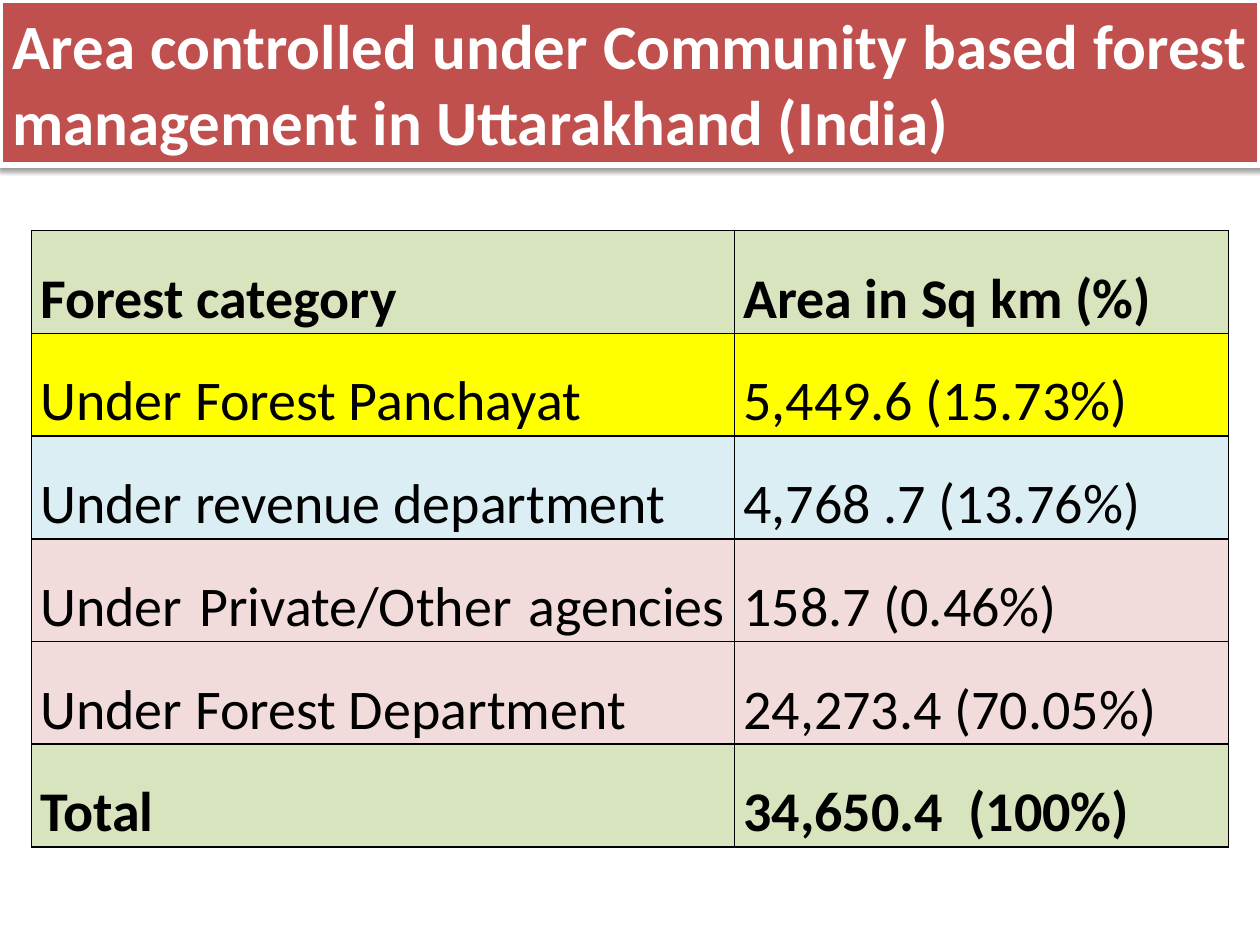
from dataclasses import dataclass

from lxml import etree
from pptx import Presentation
from pptx import util as u
from pptx.dml.color import RGBColor
from pptx.enum import text
from pptx.oxml import ns


@dataclass(frozen=True)
class Theme:
    font: str = "Calibri"
    title_size: int = 36
    table_size: int = 32
    banner: str = "C0504D"
    light: str = "FFFFFF"
    dark: str = "000000"
    green: str = "D7E4BD"
    yellow: str = "FFFF00"
    blue: str = "DBEEF4"
    pink: str = "F2DCDB"


@dataclass(frozen=True)
class ForestRow:
    category: str
    area: str
    fill: str
    bold: bool = False


THEME = Theme()
ROWS = [
    ForestRow("Forest category", "Area in Sq km (%)", THEME.green, True),
    ForestRow("Under Forest Panchayat", "5,449.6 (15.73%)", THEME.yellow),
    ForestRow("Under revenue department", "4,768 .7 (13.76%)", THEME.blue),
    # The trailing space makes the nearly full line stretch to the cell width.
    ForestRow("Under Private/Other agencies ", "158.7 (0.46%)", THEME.pink),
    ForestRow("Under Forest Department", "24,273.4 (70.05%)", THEME.pink),
    ForestRow("Total", "34,650.4  (100%)", THEME.green, True),
]
COLUMN_WIDTHS = (5.58, 3.92)
ROW_HEIGHT = 0.8


def add_element(parent, tag: str, **attributes):
    return etree.SubElement(parent, ns.qn(tag), attributes)


def style_paragraph(paragraph, size: int, color: str, bold: bool) -> None:
    paragraph.alignment = text.PP_ALIGN.JUSTIFY
    paragraph.font.name = THEME.font
    paragraph.font.size = u.Pt(size)
    paragraph.font.bold = bold
    paragraph.font.color.rgb = RGBColor.from_string(color)


def add_shadow(shape) -> None:
    """Give the shape a soft shadow that falls straight down."""
    shape.shadow.inherit = False
    effects = shape._element.spPr.find(ns.qn("a:effectLst"))
    shadow = add_element(effects, "a:outerShdw", blurRad=str(u.Pt(3.1)),
                         dist=str(u.Pt(1.6)), dir="5400000", rotWithShape="0")
    color = add_element(shadow, "a:srgbClr", val=THEME.dark)
    add_element(color, "a:alpha", val="38000")


def format_title(shape) -> None:
    shape.left, shape.top = u.Inches(0), u.Inches(0)
    shape.width, shape.height = u.Inches(10), u.Inches(1.31)
    shape.fill.solid()
    shape.fill.fore_color.rgb = RGBColor.from_string(THEME.banner)
    shape.line.color.rgb = RGBColor.from_string(THEME.light)
    shape.line.width = u.Pt(3)
    add_shadow(shape)
    frame = shape.text_frame
    frame.text = "Area controlled under Community based forest management in Uttarakhand (India)"
    frame.word_wrap = True
    frame.auto_size = text.MSO_AUTO_SIZE.NONE
    frame.vertical_anchor = text.MSO_ANCHOR.MIDDLE
    style_paragraph(frame.paragraphs[0], THEME.title_size, THEME.light, True)


def add_borders(cell) -> None:
    properties = cell._tc.get_or_add_tcPr()
    for side in ("a:lnL", "a:lnR", "a:lnT", "a:lnB"):
        line = add_element(properties, side, w=str(u.Pt(1)))
        fill = add_element(line, "a:solidFill")
        add_element(fill, "a:srgbClr", val=THEME.dark)


def format_cell(cell, wording: str, row: ForestRow) -> None:
    cell.text = wording
    cell.margin_left = cell.margin_right = u.Inches(0.07)
    cell.margin_top = cell.margin_bottom = u.Inches(0)
    add_borders(cell)
    cell.fill.solid()
    cell.fill.fore_color.rgb = RGBColor.from_string(row.fill)
    paragraph = cell.text_frame.paragraphs[0]
    paragraph.line_spacing = 1.5
    style_paragraph(paragraph, THEME.table_size, THEME.dark, row.bold)


def add_forest_table(slide, rows: list[ForestRow]) -> None:
    table = slide.shapes.add_table(
        len(rows), len(COLUMN_WIDTHS), u.Inches(0.25), u.Inches(1.83),
        u.Inches(sum(COLUMN_WIDTHS)), u.Inches(ROW_HEIGHT * len(rows))).table
    for column, width in zip(table.columns, COLUMN_WIDTHS):
        column.width = u.Inches(width)
    for table_row, row in zip(table.rows, rows):
        table_row.height = u.Inches(ROW_HEIGHT)
        for cell, wording in zip(table_row.cells, (row.category, row.area)):
            format_cell(cell, wording, row)


def main() -> None:
    presentation = Presentation()
    presentation.slide_width = u.Inches(10)
    presentation.slide_height = u.Inches(7.5)
    title_only = presentation.slide_layouts[5]
    slide = presentation.slides.add_slide(title_only)
    format_title(slide.shapes.title)
    add_forest_table(slide, ROWS)
    presentation.save("out.pptx")


if __name__ == "__main__":
    main()
